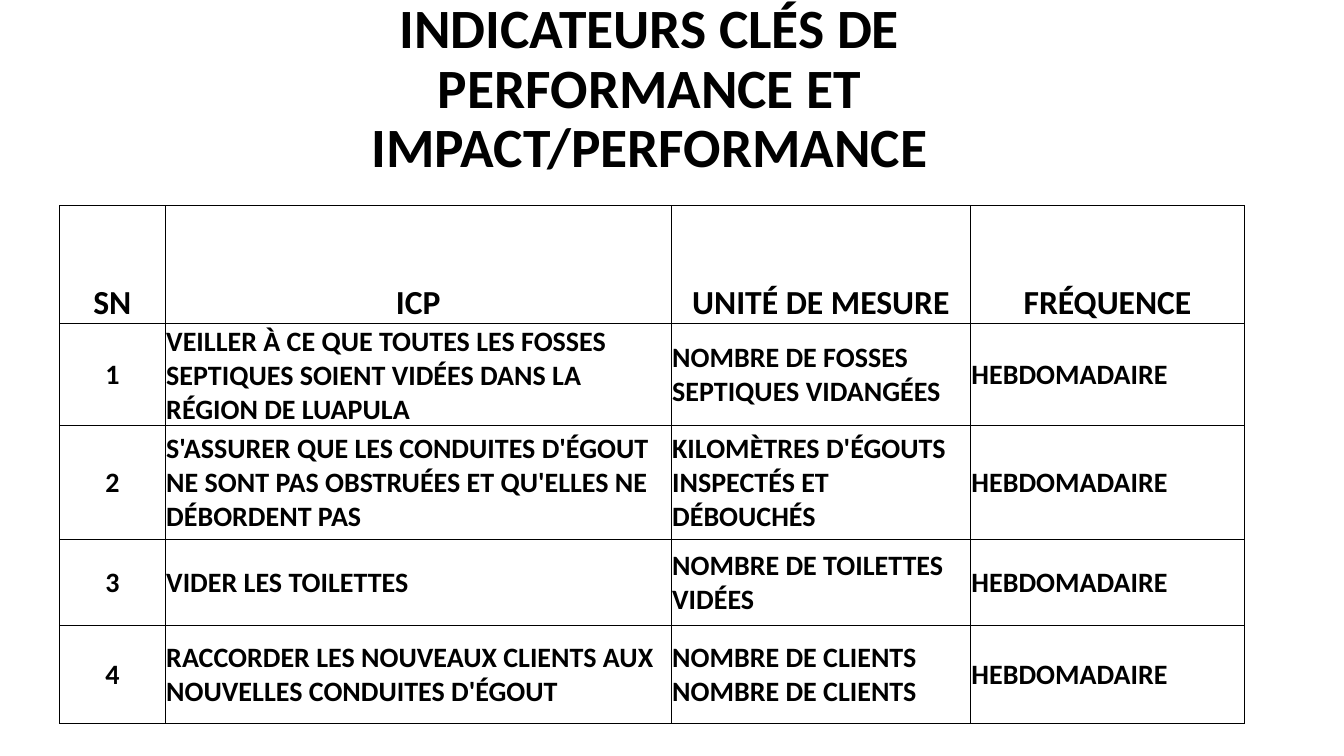
from pptx import Presentation
from pptx.dml.color import RGBColor
from pptx.enum.text import MSO_ANCHOR, PP_ALIGN
from pptx.oxml.ns import qn
from pptx.util import Pt
from lxml import etree

CENTER, LEFT = PP_ALIGN.CENTER, PP_ALIGN.LEFT
MIDDLE, BOTTOM = MSO_ANCHOR.MIDDLE, MSO_ANCHOR.BOTTOM

TITLE = "INDICATEURS CLÉS DE PERFORMANCE ET IMPACT/PERFORMANCE"
HEADERS = ("SN", "ICP", "UNITÉ DE MESURE", "FRÉQUENCE")
FREQUENCY = "HEBDOMADAIRE"
INDICATORS = [
    ("VEILLER À CE QUE TOUTES LES FOSSES SEPTIQUES SOIENT VIDÉES DANS LA RÉGION DE LUAPULA",
     "NOMBRE DE FOSSES SEPTIQUES VIDANGÉES"),
    ("S'ASSURER QUE LES CONDUITES D'ÉGOUT NE SONT PAS OBSTRUÉES ET QU'ELLES NE DÉBORDENT PAS",
     "KILOMÈTRES D'ÉGOUTS INSPECTÉS ET DÉBOUCHÉS"),
    ("VIDER LES TOILETTES", "NOMBRE DE TOILETTES VIDÉES"),
    ("RACCORDER LES NOUVEAUX CLIENTS AUX NOUVELLES CONDUITES D'ÉGOUT",
     "NOMBRE DE CLIENTS NOMBRE DE CLIENTS"),
]
COLUMN_WIDTHS = (75.6, 361.4, 213.8, 195.8)
ROW_HEIGHTS = (84.2, 61.2, 81.4, 61.2, 70.6)
TABLE_LEFT, TABLE_TOP = 42.5, 146.9
INK = "000000"


def color(value):
    return RGBColor.from_string(value)


def format_text(frame, size, align):
    para = frame.paragraphs[0]
    para.alignment = align
    for span in para.runs:
        span.font.name = "Calibri"
        span.font.size = Pt(size)
        span.font.bold = True
        span.font.color.rgb = color(INK)


def add_borders(cell):
    properties = cell._tc.get_or_add_tcPr()
    for index, side in enumerate(("lnL", "lnR", "lnT", "lnB")):
        line = etree.Element(qn("a:" + side), w=str(int(Pt(0.5))))
        fill = etree.SubElement(line, qn("a:solidFill"))
        etree.SubElement(fill, qn("a:srgbClr"), val=INK)
        properties.insert(index, line)


def add_title(page):
    box = page.shapes.add_textbox(Pt(172), Pt(12.2), Pt(584), Pt(104.4))
    frame = box.text_frame
    frame.word_wrap = True
    frame.vertical_anchor = MIDDLE
    frame.text = TITLE
    format_text(frame, 39.6, CENTER)
    frame.paragraphs[0].line_spacing = 0.9


def add_indicators(page):
    rows = [HEADERS] + [(str(number), goal, unit, FREQUENCY)
                        for number, (goal, unit) in enumerate(INDICATORS, 1)]
    table = page.shapes.add_table(
        len(rows), len(HEADERS), Pt(TABLE_LEFT), Pt(TABLE_TOP),
        Pt(sum(COLUMN_WIDTHS)), Pt(sum(ROW_HEIGHTS))).table
    table.horz_banding = False
    for column, width in zip(table.columns, COLUMN_WIDTHS):
        column.width = Pt(width)
    for row, height in zip(table.rows, ROW_HEIGHTS):
        row.height = Pt(height)
    for r, texts in enumerate(rows):
        for c, text in enumerate(texts):
            cell = table.cell(r, c)
            cell.text = text
            cell.margin_left = cell.margin_right = cell.margin_top = Pt(0.7)
            cell.margin_bottom = 0
            cell.vertical_anchor = MIDDLE if r else BOTTOM
            cell.fill.background()
            format_text(cell.text_frame, 20 if r else 24, LEFT if r and c else CENTER)
            add_borders(cell)


def main():
    deck = Presentation()
    deck.slide_width, deck.slide_height = Pt(960), Pt(540)
    page = deck.slides.add_slide(deck.slide_layouts[6])
    add_title(page)
    add_indicators(page)
    deck.save("out.pptx")


if __name__ == "__main__":
    main()
